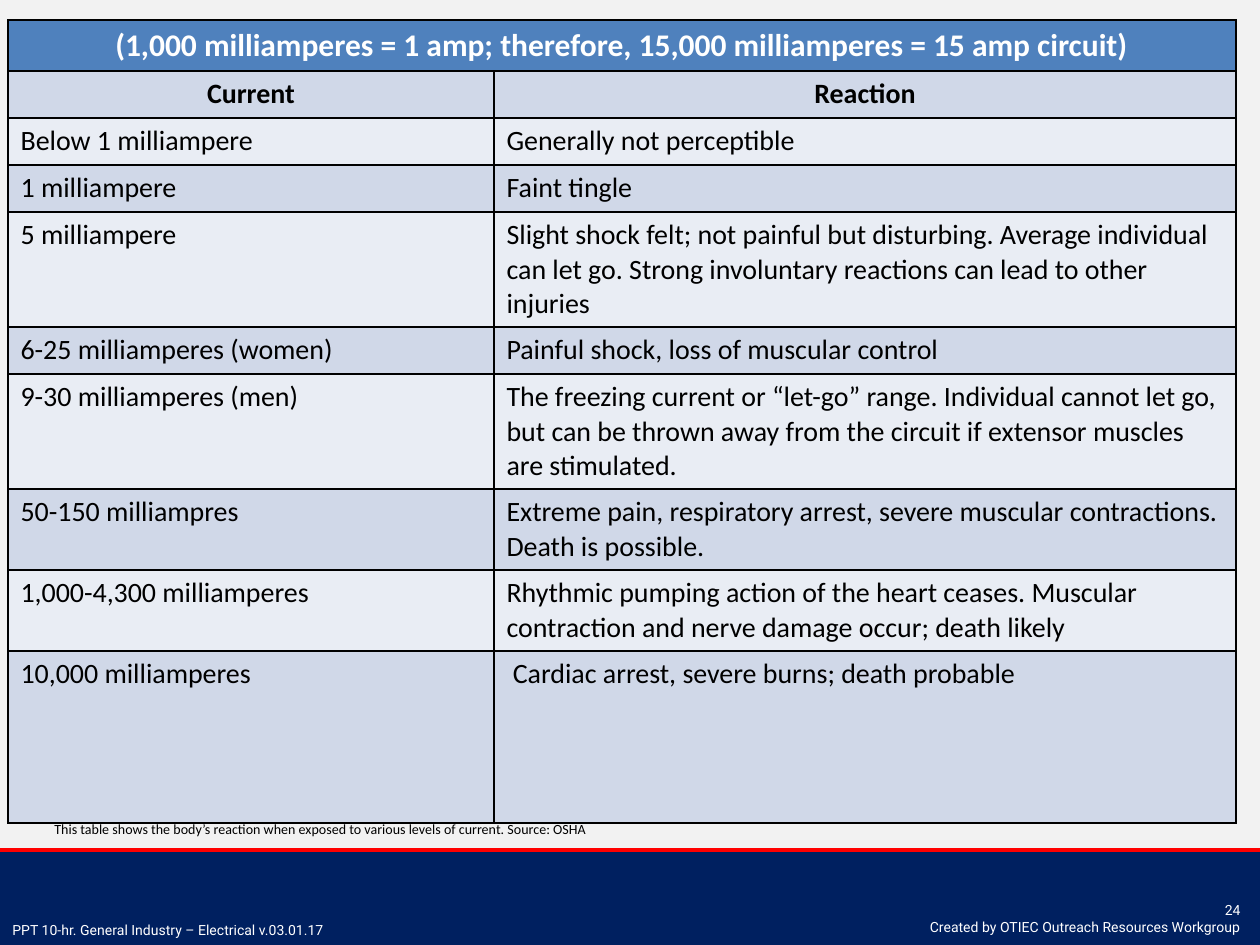
from lxml import etree
from pptx import Presentation, util as u
from pptx.dml.color import RGBColor
from pptx.enum import shapes, text
from pptx.oxml.ns import qn

# Content
CONVERSION = "(1,000 milliamperes = 1 amp; therefore, 15,000 milliamperes = 15 amp circuit)"
HEADINGS = ("Current", "Reaction")
EFFECTS = [
    ("Below 1 milliampere", "Generally not perceptible"),
    ("1 milliampere", "Faint tingle"),
    ("5 milliampere", "Slight shock felt; not painful but disturbing. Average individual "
     "can let go. Strong involuntary reactions can lead to other injuries"),
    ("6-25 milliamperes (women)", "Painful shock, loss of muscular control"),
    ("9-30 milliamperes (men)", "The freezing current or “let-go” range. Individual cannot let go, "
     "but can be thrown away from the circuit if extensor muscles are stimulated."),
    ("50-150 milliampres", "Extreme pain, respiratory arrest, severe muscular contractions. "
     "Death is possible."),
    ("1,000-4,300 milliamperes", "Rhythmic pumping action of the heart ceases. Muscular "
     "contraction and nerve damage occur; death likely"),
    ("10,000 milliamperes", " Cardiac arrest, severe burns; death probable"),
]
SOURCE_NOTE = "This table shows the body’s reaction when exposed to various levels of current. Source: OSHA"
COURSE = "PPT 10-hr. General Industry – Electrical v.03.01.17"
CREDIT = ("24", "Created by OTIEC Outreach Resources Workgroup")

THEME = {
    "page": "F2F2F2", "footer": "002060", "rule": "FF0000", "ink": "000000", "light": "FFFFFF",
    "banner": "4F81BD", "bands": ("D0D8E8", "E9EDF4"),
    "body_font": "Calibri", "footer_font": "Roboto",
    "banner_size": 18, "cell_size": 16, "small_size": 8,
}

# Layout in px
WIDTH, HEIGHT, FOOTER_TOP = 1260, 945, 850
COLUMNS = (486, 742)
ONE_LINE, TWO_LINES, THREE_LINES = 47, 81, 115
ROWS = (51, ONE_LINE, ONE_LINE, ONE_LINE, THREE_LINES, ONE_LINE, THREE_LINES,
        TWO_LINES, TWO_LINES, 172)


def px(n):
    return u.Emu(round(n * 914400 / 126))


def box(*lengths):
    return [px(n) for n in lengths]


def color(name):
    return RGBColor.from_string(THEME.get(name, name))


def paint(fill, name):
    fill.solid()
    fill.fore_color.rgb = color(name)


def write(paragraph, words, size, ink="ink", font="body_font", bold=False, align=None):
    run = paragraph.add_run()
    run.text = words
    run.font.name = THEME[font]
    run.font.size = u.Pt(THEME[size])
    run.font.bold = bold
    run.font.color.rgb = color(ink)
    paragraph.alignment = align


def add_lines(slide, place, lines, anchor=text.MSO_ANCHOR.TOP, **style):
    frame = slide.shapes.add_textbox(*box(*place)).text_frame
    frame.word_wrap = True
    frame.vertical_anchor = anchor
    for i, words in enumerate(lines):
        paragraph = frame.add_paragraph() if i else frame.paragraphs[0]
        write(paragraph, words, "small_size", **style)


def fill_cell(cell, words, fill, size="cell_size", **style):
    write(cell.text_frame.paragraphs[0], words, size, **style)
    properties = cell._tc.get_or_add_tcPr()
    for side in ("a:lnL", "a:lnR", "a:lnT", "a:lnB"):
        border = etree.SubElement(properties, qn(side), w=str(u.Pt(1)))
        solid = etree.SubElement(border, qn("a:solidFill"))
        etree.SubElement(solid, qn("a:srgbClr"), val=THEME["ink"])
    paint(cell.fill, fill)


def main():
    deck = Presentation()
    deck.slide_width, deck.slide_height = box(WIDTH, HEIGHT)
    slide = deck.slides.add_slide(deck.slide_layouts[6])
    paint(slide.background.fill, "page")
    center, right = text.PP_ALIGN.CENTER, text.PP_ALIGN.RIGHT

    # Footer band with its red rule
    band = slide.shapes.add_shape(shapes.MSO_SHAPE.RECTANGLE,
                                  *box(0, FOOTER_TOP, WIDTH, HEIGHT - FOOTER_TOP))
    band.shadow.inherit = False
    paint(band.fill, "footer")
    band.line.fill.background()
    rule = slide.shapes.add_connector(shapes.MSO_CONNECTOR.STRAIGHT,
                                      *box(0, FOOTER_TOP, WIDTH, FOOTER_TOP))
    rule.line.color.rgb = color("rule")
    rule.line.width = u.Pt(2)
    etree.SubElement(rule._element.spPr, qn("a:effectLst"))
    footer = {"ink": "light", "font": "footer_font"}
    add_lines(slide, (0, 915, 400, 30), [COURSE], **footer)
    add_lines(slide, (865, 889, 388, 59), CREDIT, text.MSO_ANCHOR.MIDDLE, align=right, **footer)

    # Table of currents and reactions
    table = slide.shapes.add_table(len(ROWS), len(COLUMNS),
                                   *box(8, 20, sum(COLUMNS), sum(ROWS))).table
    for column, width in zip(table.columns, COLUMNS):
        column.width = px(width)
    for row, height in zip(table.rows, ROWS):
        row.height = px(height)
    banner = table.cell(0, 0)
    banner.merge(table.cell(0, 1))
    fill_cell(banner, CONVERSION, "banner", "banner_size", ink="light", bold=True, align=center)
    for r, entries in enumerate([HEADINGS] + EFFECTS):
        heading = {"bold": True, "align": center} if r == 0 else {}
        for c, words in enumerate(entries):
            fill_cell(table.cell(r + 1, c), words, THEME["bands"][r % 2], **heading)

    # Source note
    add_lines(slide, (42, 814, 1194, 30), [SOURCE_NOTE])

    deck.save("out.pptx")


if __name__ == "__main__":
    main()
